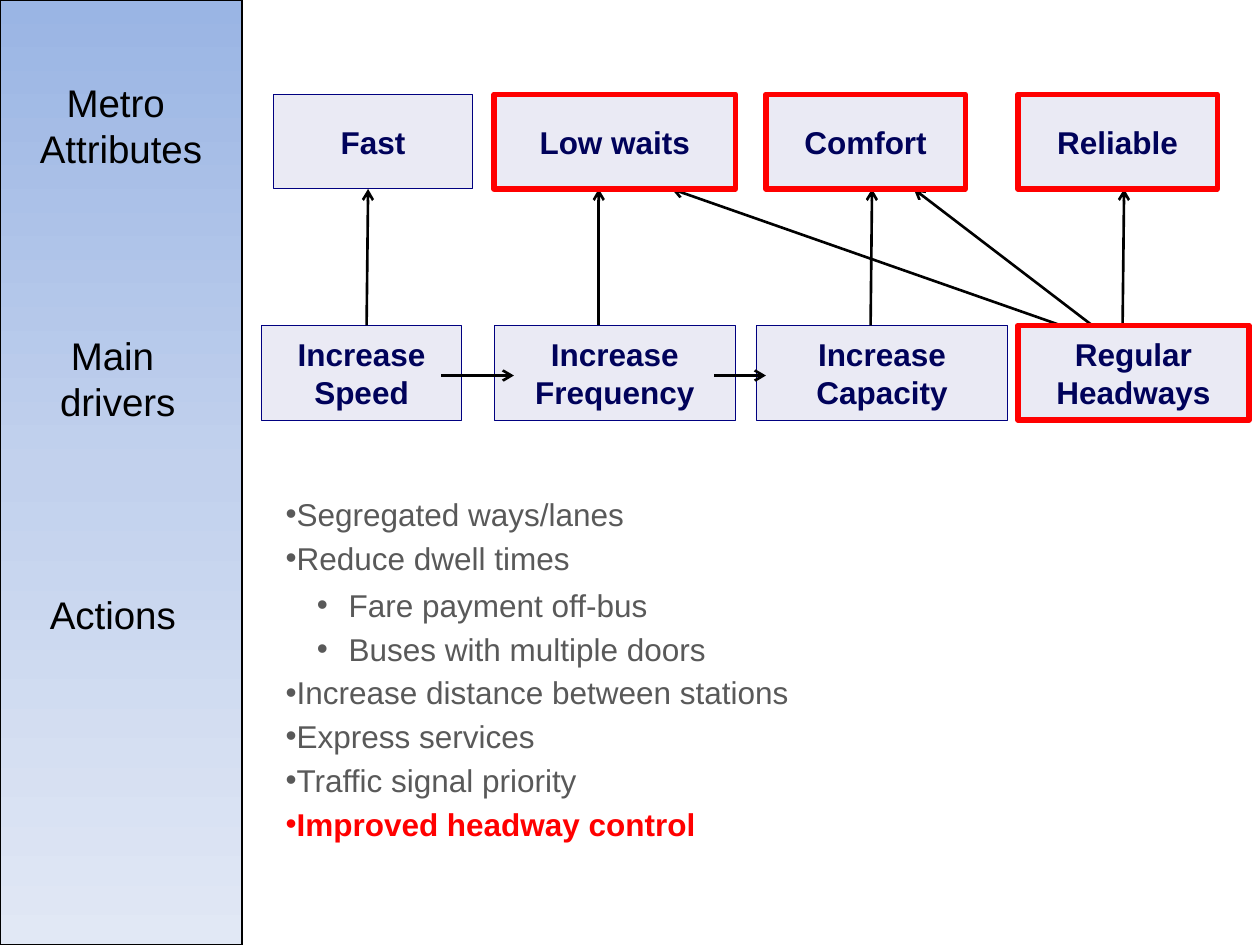
import copy
from dataclasses import dataclass

import pptx
import pptx.dml.color
import pptx.enum.shapes
import pptx.enum.text
import pptx.oxml
import pptx.oxml.ns
import pptx.util
from lxml import etree

Cm = pptx.util.Cm
Pt = pptx.util.Pt
RGBColor = pptx.dml.color.RGBColor
qn = pptx.oxml.ns.qn
RECTANGLE = pptx.enum.shapes.MSO_SHAPE.RECTANGLE
ANCHOR = pptx.enum.text.MSO_ANCHOR
ALIGN = pptx.enum.text.PP_ALIGN

FONT = "Arial"
BLACK = RGBColor(0x00, 0x00, 0x00)
RED = RGBColor(0xFF, 0x00, 0x00)
GREY = RGBColor(0x59, 0x59, 0x59)
NAVY_TEXT = RGBColor(0x00, 0x02, 0x5A)
NAVY_LINE = RGBColor(0x00, 0x00, 0x80)
INDIGO = RGBColor(0x33, 0x33, 0x99)
SIDEBAR_STOPS = (
    (0, RGBColor(0x9A, 0xB5, 0xE4)),
    (0.5, RGBColor(0xC2, 0xD1, 0xED)),
    (1, RGBColor(0xE1, 0xE8, 0xF5)),
)

ATTRIBUTE_TOP, DRIVER_TOP, BOX_HEIGHT = 1.9, 6.56, 1.91
ATTRIBUTE_BOTTOM = ATTRIBUTE_TOP + BOX_HEIGHT
FLOW_Y = 7.57


@dataclass(frozen=True)
class Box:
    lines: tuple[str, ...]
    left: float
    top: float
    width: float
    highlighted: bool = False


@dataclass(frozen=True)
class Arrow:
    x1: float
    y1: float
    x2: float
    y2: float


@dataclass(frozen=True)
class Action:
    text: str
    level: int = 0
    spacing: int = 25
    color: RGBColor = GREY
    bold: bool = False


BOXES = (
    Box(("Increase", "Speed"), 5.28, DRIVER_TOP, 4.02),
    Box(("Increase Frequency",), 9.96, DRIVER_TOP, 4.87),
    Box(("Increase Capacity",), 15.24, DRIVER_TOP, 5.08),
    Box(("Regular Headways",), 20.52, DRIVER_TOP, 4.66, True),
    Box(("Fast",), 5.51, ATTRIBUTE_TOP, 4.02),
    Box(("Low waits",), 9.96, ATTRIBUTE_TOP, 4.87, True),
    Box(("Comfort",), 15.44, ATTRIBUTE_TOP, 4.02, True),
    Box(("Reliable",), 20.52, ATTRIBUTE_TOP, 4.02, True),
)
# Driver x and attribute x of each arrow going up
RISES = ((21.39, 13.54), (22.02, 18.42), (7.39, 7.42),
         (12.07, 12.07), (17.55, 17.58), (22.63, 22.66))
ARROWS = tuple(
    Arrow(start, DRIVER_TOP, end, ATTRIBUTE_BOTTOM) for start, end in RISES
) + (
    Arrow(8.89, FLOW_Y, 10.36, FLOW_Y),
    Arrow(14.4, FLOW_Y, 15.44, FLOW_Y),
)
ACTIONS = (
    Action("Segregated ways/lanes"),
    Action("Reduce dwell times"),
    Action("Fare payment off-bus", level=1, spacing=27),
    Action("Buses with multiple doors", level=1),
    Action("Increase distance between stations"),
    Action("Express services"),
    Action("Traffic signal priority"),
    Action("Improved headway control", color=RED, bold=True),
)


def add_run(paragraph, text: str, size: int, color: RGBColor, bold: bool = False) -> None:
    run = paragraph.add_run()
    run.text = text
    run.font.name = FONT
    run.font.size = Pt(size)
    run.font.bold = bold
    run.font.color.rgb = color


def write_centred(frame, lines: tuple[str, ...], size: int, color: RGBColor,
                  bold: bool = False) -> None:
    for index, line in enumerate(lines):
        paragraph = frame.add_paragraph() if index else frame.paragraphs[0]
        paragraph.alignment = ALIGN.CENTER
        add_run(paragraph, line, size, color, bold)


def add_rectangle(slide, left: float, top: float, width: float, height: float,
                  line: RGBColor, weight: float):
    rectangle = slide.shapes.add_shape(RECTANGLE, Cm(left), Cm(top), Cm(width), Cm(height))
    rectangle.shadow.inherit = False
    rectangle.line.color.rgb = line
    rectangle.line.width = Pt(weight)
    return rectangle


def add_sidebar(slide) -> None:
    sidebar = add_rectangle(slide, 0, 0, 4.88, 19.05, BLACK, 0.75)
    sidebar.fill.gradient()
    sidebar.fill.gradient_angle = 270
    stop_list = sidebar.element.spPr.find(".//" + qn("a:gsLst"))
    stop_list.append(copy.deepcopy(stop_list[-1]))
    for stop, (position, color) in zip(sidebar.fill.gradient_stops, SIDEBAR_STOPS):
        stop.position = position
        stop.color.rgb = color
    frame = sidebar.text_frame
    frame.word_wrap = False
    frame.vertical_anchor = ANCHOR.TOP
    frame.margin_top = Cm(1.59)
    write_centred(frame, ("Metro ", "Attributes"), 22, BLACK)


def add_row_label(slide, lines: tuple[str, ...], left: float, top: float,
                  width: float, height: float) -> None:
    label = slide.shapes.add_textbox(Cm(left), Cm(top), Cm(width), Cm(height))
    label.text_frame.word_wrap = False
    write_centred(label.text_frame, lines, 22, BLACK)


def add_box(slide, box: Box) -> None:
    rectangle = add_rectangle(slide, box.left, box.top, box.width, BOX_HEIGHT, NAVY_LINE, 0.5)
    rectangle.fill.solid()
    rectangle.fill.fore_color.rgb = INDIGO
    color = rectangle.element.spPr.find(qn("a:solidFill"))[0]
    etree.SubElement(color, qn("a:alpha"), val="10000")
    rectangle.text_frame.word_wrap = True
    rectangle.text_frame.vertical_anchor = ANCHOR.MIDDLE
    write_centred(rectangle.text_frame, box.lines, 18, NAVY_TEXT, bold=True)


def add_highlight(slide, box: Box) -> None:
    frame = add_rectangle(slide, box.left, box.top, box.width, BOX_HEIGHT, RED, 3)
    frame.fill.background()


def add_arrow(slide, arrow: Arrow) -> None:
    connector = slide.shapes.add_connector(
        pptx.enum.shapes.MSO_CONNECTOR.STRAIGHT,
        Cm(arrow.x1), Cm(arrow.y1), Cm(arrow.x2), Cm(arrow.y2))
    connector.line.color.rgb = BLACK
    connector.line.width = Pt(1.5)
    etree.SubElement(connector.line._get_or_add_ln(), qn("a:tailEnd"), type="arrow")
    etree.SubElement(connector.element.spPr, qn("a:effectLst"))


def add_actions(slide) -> None:
    listing = slide.shapes.add_textbox(Cm(5.51), Cm(9.73), Cm(15.88), Cm(7.44))
    frame = listing.text_frame
    frame.word_wrap = True
    for index, action in enumerate(ACTIONS):
        paragraph = frame.add_paragraph() if index else frame.paragraphs[0]
        paragraph.level = action.level
        paragraph.line_spacing = Pt(action.spacing)
        properties = paragraph._p.get_or_add_pPr()
        properties.set("marL", str(Cm(1.27 * action.level)))
        properties.set("indent", str(Cm(-0.64 * action.level)))
        etree.SubElement(properties, qn("a:buFont"), typeface=FONT)
        etree.SubElement(properties, qn("a:buChar"), char="•")
        add_run(paragraph, action.text, 18, action.color, action.bold)


def main() -> None:
    deck = pptx.Presentation()
    deck.slide_width, deck.slide_height = Cm(25.4), Cm(19.05)
    slide = deck.slides.add_slide(deck.slide_layouts[6])

    # Sidebar with the row labels
    add_sidebar(slide)
    add_row_label(slide, ("Main ", "drivers"), 0.94, 6.56, 2.87, 2.13)
    add_row_label(slide, ("Actions",), 0.74, 11.79, 3.07, 1.19)

    # Drivers leading to attributes
    for box in BOXES:
        add_box(slide, box)
    for arrow in ARROWS:
        add_arrow(slide, arrow)
    for box in BOXES:
        if box.highlighted:
            add_highlight(slide, box)

    # Actions
    add_actions(slide)
    deck.save("out.pptx")


if __name__ == "__main__":
    main()
